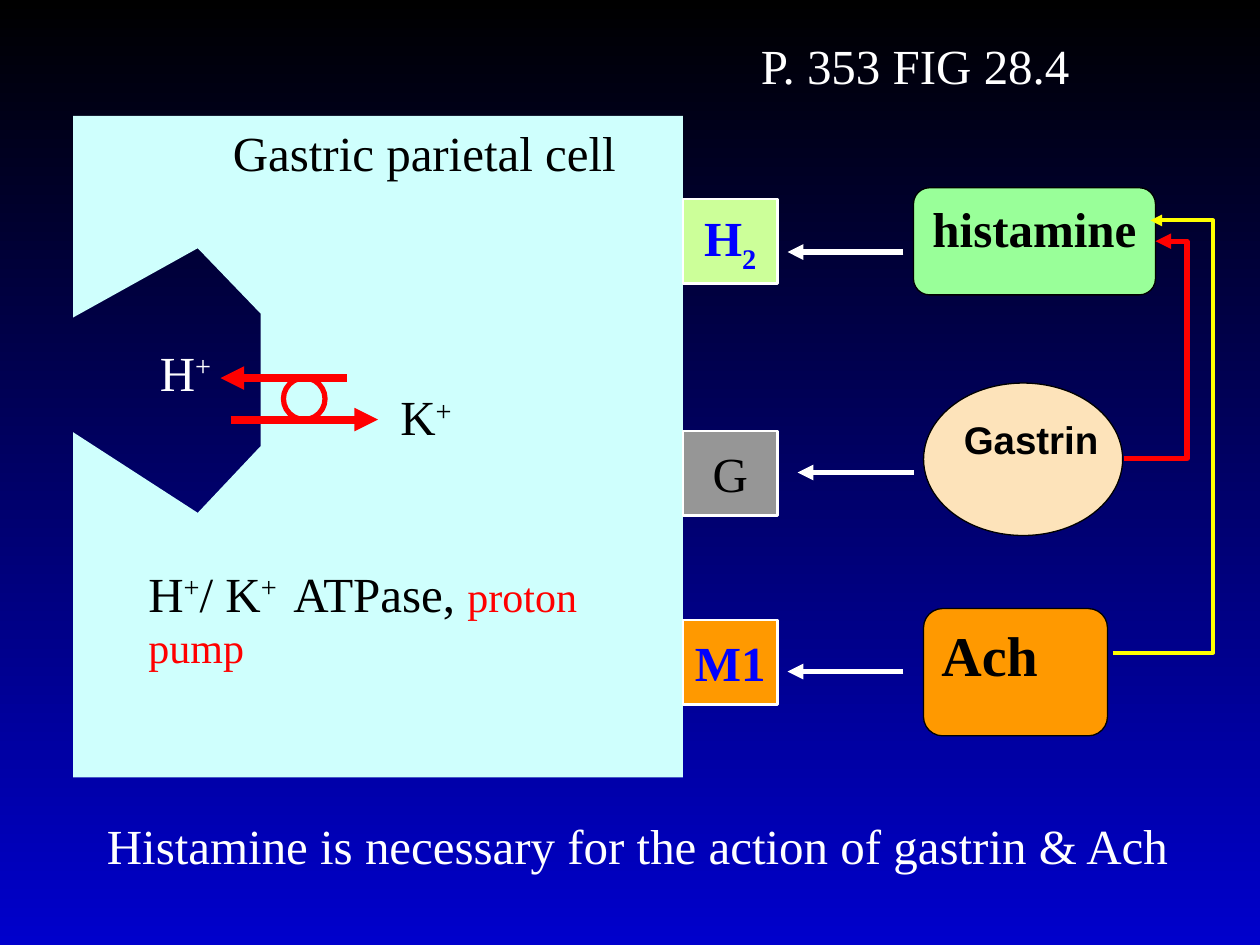
import pptx
import pptx.util
import pptx.dml.color
import pptx.enum.shapes
import pptx.enum.text
import pptx.oxml
import pptx.oxml.ns

Inches, Pt = pptx.util.Inches, pptx.util.Pt
RGB = pptx.dml.color.RGBColor.from_string
MSO = pptx.enum.shapes.MSO_SHAPE
CONN = pptx.enum.shapes.MSO_CONNECTOR
ALIGN = pptx.enum.text.PP_ALIGN
ANCHOR = pptx.enum.text.MSO_ANCHOR
AUTO = pptx.enum.text.MSO_AUTO_SIZE
SERIF = "Times New Roman"
C = {
    "black": "000000", "white": "FFFFFF", "navy": "0000CC", "blue": "0000FF",
    "red": "FF0000", "yellow": "FFFF00", "cell": "CFFFFD", "mint": "99FF99",
    "peach": "FDE3BA", "orange": "FF9900", "lime": "CCFF99", "gray": "969696",
}


def write(sp, runs, color, size=28, bold=False, font=SERIF, align=ALIGN.LEFT,
          anchor=ANCHOR.TOP, wrap=True):
    tf = sp.text_frame
    tf.word_wrap = wrap
    tf.vertical_anchor = anchor
    p = tf.paragraphs[0]
    p.alignment = align
    for text, base in runs:
        r = p.add_run()
        r.text = text
        r.font.name, r.font.size, r.font.bold = font, Pt(size), bold
        r.font.color.rgb = RGB(C[color])
        if base:
            r._r.get_or_add_rPr().set("baseline", str(base * 1000))
    return p


def add_shape(shapes, kind, box, fill, line, width):
    sp = shapes.add_shape(kind, *map(Inches, box))
    sp.shadow.inherit = False
    if fill:
        sp.fill.solid()
        sp.fill.fore_color.rgb = RGB(C[fill])
    else:
        sp.fill.background()
    sp.line.color.rgb = RGB(C[line])
    sp.line.width = Pt(width)
    return sp


prs = pptx.Presentation()
prs.slide_width, prs.slide_height = Inches(10), Inches(7.5)
s = prs.slides.add_slide(prs.slide_layouts[6])
bg = s.background.fill
bg.gradient()
bg.gradient_angle = 270
for stop, color in zip(bg.gradient_stops, ("black", "navy")):
    stop.color.rgb = RGB(C[color])

outline = [(5.42, 6.17), (0.58, 6.17), (0.58, 3.43), (1.57, 4.07), (2.07, 3.54),
           (2.07, 2.49), (1.57, 1.97), (0.58, 2.52), (0.58, 0.92)]
fb = s.shapes.build_freeform(Inches(5.42), Inches(0.92))
fb.add_line_segments([(Inches(x), Inches(y)) for x, y in outline], close=True)
cell = fb.convert_to_shape()
cell.shadow.inherit = False
cell.fill.solid()
cell.fill.fore_color.rgb = RGB(C["cell"])
cell.line.fill.background()

sources = {}
for text, box, fill, size, align in [
    ("histamine", (7.25, 1.49, 1.92, 0.85), "mint", 28, ALIGN.CENTER),
    ("Ach", (7.33, 4.83, 1.46, 1.01), "orange", 32, ALIGN.LEFT),
]:
    sp = add_shape(s.shapes, MSO.ROUNDED_RECTANGLE, box, fill, "black", 0.75)
    sp.adjustments[0] = 0.15
    write(sp, [(text, 0)], "black", size, True, align=align)
    sources[text] = sp

gastrin = s.shapes.add_group_shape()
add_shape(gastrin.shapes, MSO.OVAL, (7.33, 3.04, 1.58, 1.21), "peach", "black", 0.75)
tb = gastrin.shapes.add_textbox(Inches(7.65), Inches(3.3), Inches(1.07), Inches(0.37))
tf = tb.text_frame
tf.margin_left = tf.margin_right = tf.margin_top = tf.margin_bottom = 0
tf.auto_size = AUTO.SHAPE_TO_FIT_TEXT
write(tb, [("Gastrin", 0)], "black", 22, True, "Arial", wrap=False)

add_shape(s.shapes, MSO.FLOWCHART_CONNECTOR, (2.25, 3, 0.33, 0.33), None, "red", 3)

for runs, top, fill, color, bold in [
    ([("H", 0), ("2", -25)], 1.58, "lime", "blue", True),
    ([("G", 0)], 3.42, "gray", "black", False),
    ([("M1", 0)], 4.92, "orange", "blue", True),
]:
    sp = add_shape(s.shapes, MSO.RECTANGLE, (5.42, top, 0.75, 0.67), fill, "white", 1.5)
    write(sp, runs, color, bold=bold, align=ALIGN.CENTER, anchor=ANCHOR.MIDDLE, wrap=False)

for x1, y1, x2, y2, color, width, bend, target in [
    (2.75, 3, 1.75, 3, "red", 4.5, None, None),
    (1.83, 3.33, 3, 3.33, "red", 4.5, None, None),
    (7.17, 5.33, 6.25, 5.33, "white", 3, None, None),
    (7.25, 3.75, 6.33, 3.75, "white", 3, None, None),
    (7.17, 2, 6.25, 2, "white", 3, None, None),
    (8.92, 3.64, 9.17, 1.91, "red", 3, 2, "histamine"),
    (8.83, 5.18, 9.13, 1.75, "yellow", 2.25, 2.66, None),
]:
    kind = CONN.ELBOW if bend else CONN.STRAIGHT
    cx = s.shapes.add_connector(kind, *map(Inches, (x1, y1, x2, y2)))
    cx.line.color.rgb = RGB(C[color])
    cx.line.width = Pt(width)
    spPr = cx._element.spPr
    tail = pptx.oxml.parse_xml(f'<a:tailEnd {pptx.oxml.ns.nsdecls("a")} type="triangle"/>')
    spPr.find(pptx.oxml.ns.qn("a:ln")).append(tail)
    spPr.append(pptx.oxml.parse_xml(f'<a:effectLst {pptx.oxml.ns.nsdecls("a")}/>'))
    if bend:
        gd = pptx.oxml.parse_xml(
            f'<a:gd {pptx.oxml.ns.nsdecls("a")} name="adj1" fmla="val {round(bend * 100000)}"/>')
        geom = spPr.find(pptx.oxml.ns.qn("a:prstGeom"))
        geom.find(pptx.oxml.ns.qn("a:avLst")).append(gd)
    if target:
        cx.end_connect(sources[target], 3)

for runs, box, color in [
    ([("H", 0), ("+", 30)], (1.17, 2.67, 0.83, 0.57), "white"),
    ([("K", 0), ("+", 30)], (3.08, 3.02, 0.83, 0.57), "black"),
    ([("Gastric parietal cell", 0)], (1.75, 0.92, 3.67, 0.57), "black"),
    ([("Histamine is necessary for the action of gastrin & Ach", 0)],
     (0.75, 6.42, 8.75, 0.57), "white"),
    ([("H", 0), ("+", 30), ("/ K", 0), ("+ ", 30), (" ATPase, ", 0),
      ("proton", 0), (" ", 0), ("pump", 0)], (1.08, 4.42, 4.17, 0.97), "black"),
    ([("P. 353 FIG 28.4", 0)], (5.94, 0.23, 3.83, 0.57), "white"),
]:
    tb = s.shapes.add_textbox(*map(Inches, box))
    tb.text_frame.auto_size = AUTO.SHAPE_TO_FIT_TEXT
    p = write(tb, runs, color)
    for r in p.runs:
        if r.text in ("proton", "pump"):
            r.font.size = Pt(24)
            r.font.color.rgb = RGB(C["red"])

prs.save("out.pptx")
